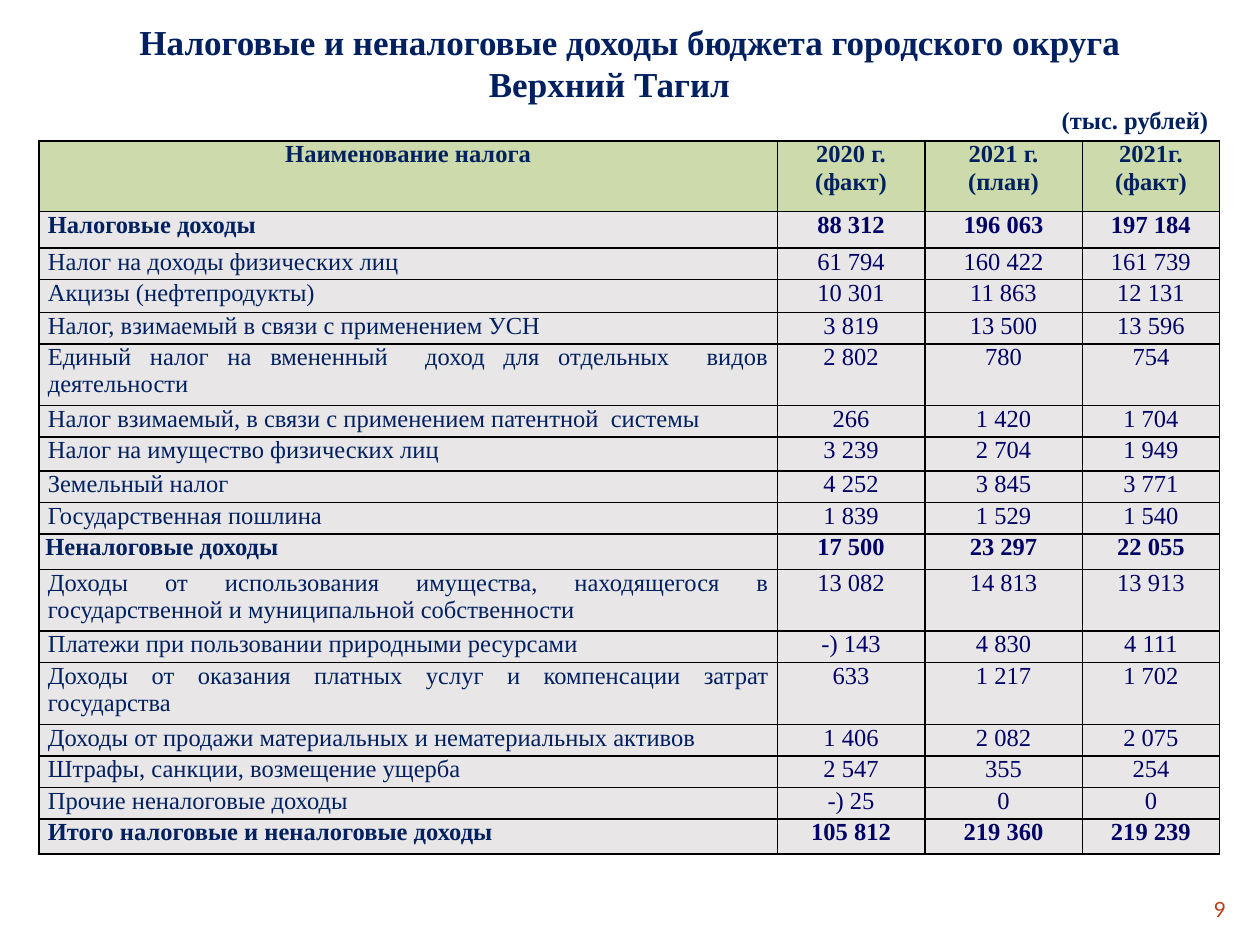
from lxml.etree import SubElement
from pptx import Presentation
from pptx.dml.color import RGBColor
from pptx.enum.text import MSO_ANCHOR, MSO_AUTO_SIZE, PP_ALIGN
from pptx.oxml.ns import qn
from pptx.util import Inches, Pt

COLORS = {
    "navy": "002060",
    "figure": "000066",
    "header": "CCDAAC",
    "body": "E9E6E7",
    "border": "000000",
    "page_number": "BA4014",
}


def write(frame, text, size=14, color="navy", bold=False, font="Times New Roman",
          align=PP_ALIGN.CENTER, first=True):
    """Write text into a frame, one paragraph per line, and return the last one."""
    for index, line in enumerate(text.split("\n")):
        para = frame.paragraphs[0] if first and index == 0 else frame.add_paragraph()
        para.alignment = align
        span = para.add_run()
        span.text = line
        span.font.name = font
        span.font.size = Pt(size)
        span.font.bold = bold
        span.font.color.rgb = RGBColor.from_string(COLORS[color])
    return para


def add_borders(cell):
    properties = cell._tc.get_or_add_tcPr()
    for side in ("lnL", "lnR", "lnT", "lnB"):
        line = SubElement(properties, qn("a:" + side), w=str(Pt(1)))
        fill = SubElement(line, qn("a:solidFill"))
        SubElement(fill, qn("a:srgbClr"), val=COLORS["border"])


deck = Presentation()
deck.slide_width, deck.slide_height = Inches(10), Inches(7.5)
slide = deck.slides.add_slide(deck.slide_layouts[5])

# Title with the unit of measure
title = slide.shapes.title
title.left, title.top = Inches(0.31), Inches(0.11)
title.width, title.height = Inches(9.38), Inches(1.01)
frame = title.text_frame
frame.auto_size = MSO_AUTO_SIZE.NONE
frame.vertical_anchor = MSO_ANCHOR.MIDDLE
write(frame, "Налоговые и неналоговые доходы бюджета городского округа",
      size=20, bold=True)
town = write(frame, "Верхний Тагил", size=20, bold=True,
             align=PP_ALIGN.LEFT, first=False)
town._p.get_or_add_pPr().set("marL", str(Inches(3.47)))
write(frame, "(тыс. рублей)", bold=True, align=PP_ALIGN.RIGHT, first=False)

# Revenue table: row height, then the four cells
rows = [
    (0.56, "Наименование налога", "2020 г.\n(факт)", "2021 г.\n(план)", "2021г.\n(факт)"),
    (0.29, "Налоговые доходы", "88 312", "196 063", "197 184"),
    (0.25, "Налог на доходы физических лиц", "61 794", "160 422", "161 739"),
    (0.26, "Акцизы (нефтепродукты)", "10 301", "11 863", "12 131"),
    (0.25, "Налог, взимаемый в связи с применением УСН", "3 819", "13 500", "13 596"),
    (0.49, "Единый налог на вмененный  доход для отдельных  видов деятельности",
     "2 802", "780", "754"),
    (0.25, "Налог взимаемый, в связи с применением патентной  системы",
     "266", "1 420", "1 704"),
    (0.27, "Налог на имущество физических лиц", "3 239", "2 704", "1 949"),
    (0.25, "Земельный налог", "4 252", "3 845", "3 771"),
    (0.25, "Государственная пошлина", "1 839", "1 529", "1 540"),
    (0.28, "Неналоговые доходы", "17 500", "23 297", "22 055"),
    (0.49, "Доходы от использования имущества, находящегося в государственной "
     "и муниципальной собственности", "13 082", "14 813", "13 913"),
    (0.25, "Платежи при пользовании природными ресурсами", "-) 143", "4 830", "4 111"),
    (0.49, "Доходы от оказания платных услуг и компенсации затрат государства",
     "633", "1 217", "1 702"),
    (0.25, "Доходы от продажи материальных и нематериальных активов",
     "1 406", "2 082", "2 075"),
    (0.25, "Штрафы, санкции, возмещение ущерба", "2 547", "355", "254"),
    (0.25, "Прочие неналоговые доходы", "-) 25", "0", "0"),
    (0.28, "Итого налоговые и неналоговые доходы", "105 812", "219 360", "219 239"),
]
header_row, nontax_row = 0, 10
bold_rows = {header_row, 1, nontax_row, len(rows) - 1}

table = slide.shapes.add_table(len(rows), 4, Inches(0.31), Inches(1.12),
                               Inches(9.38), Inches(5.63)).table
for column, width in zip(table.columns, (5.86, 1.17, 1.25, 1.09)):
    column.width = Inches(width)

for row_index, (height, *texts) in enumerate(rows):
    table.rows[row_index].height = Inches(height)
    is_header = row_index == header_row
    for column_index, text in enumerate(texts):
        cell = table.cell(row_index, column_index)
        is_label = column_index == 0 and not is_header
        inset = 0.07 if is_label and row_index != nontax_row else 0.05
        cell.margin_left = cell.margin_right = Inches(inset)
        cell.margin_top = cell.margin_bottom = 0
        cell.vertical_anchor = MSO_ANCHOR.TOP
        add_borders(cell)
        cell.fill.solid()
        cell.fill.fore_color.rgb = RGBColor.from_string(
            COLORS["header" if is_header else "body"])
        write(cell.text_frame, text, bold=row_index in bold_rows,
              color="navy" if is_header or is_label else "figure",
              align=PP_ALIGN.JUSTIFY if is_label else PP_ALIGN.CENTER)

# Page number
page_box = slide.shapes.add_textbox(Inches(9), Inches(7.08), Inches(0.83), Inches(0.27))
page_box.text_frame.word_wrap = True
page_box.text_frame.vertical_anchor = MSO_ANCHOR.MIDDLE
write(page_box.text_frame, "9", size=12, color="page_number", font="Lato",
      align=PP_ALIGN.RIGHT)

deck.save("out.pptx")
